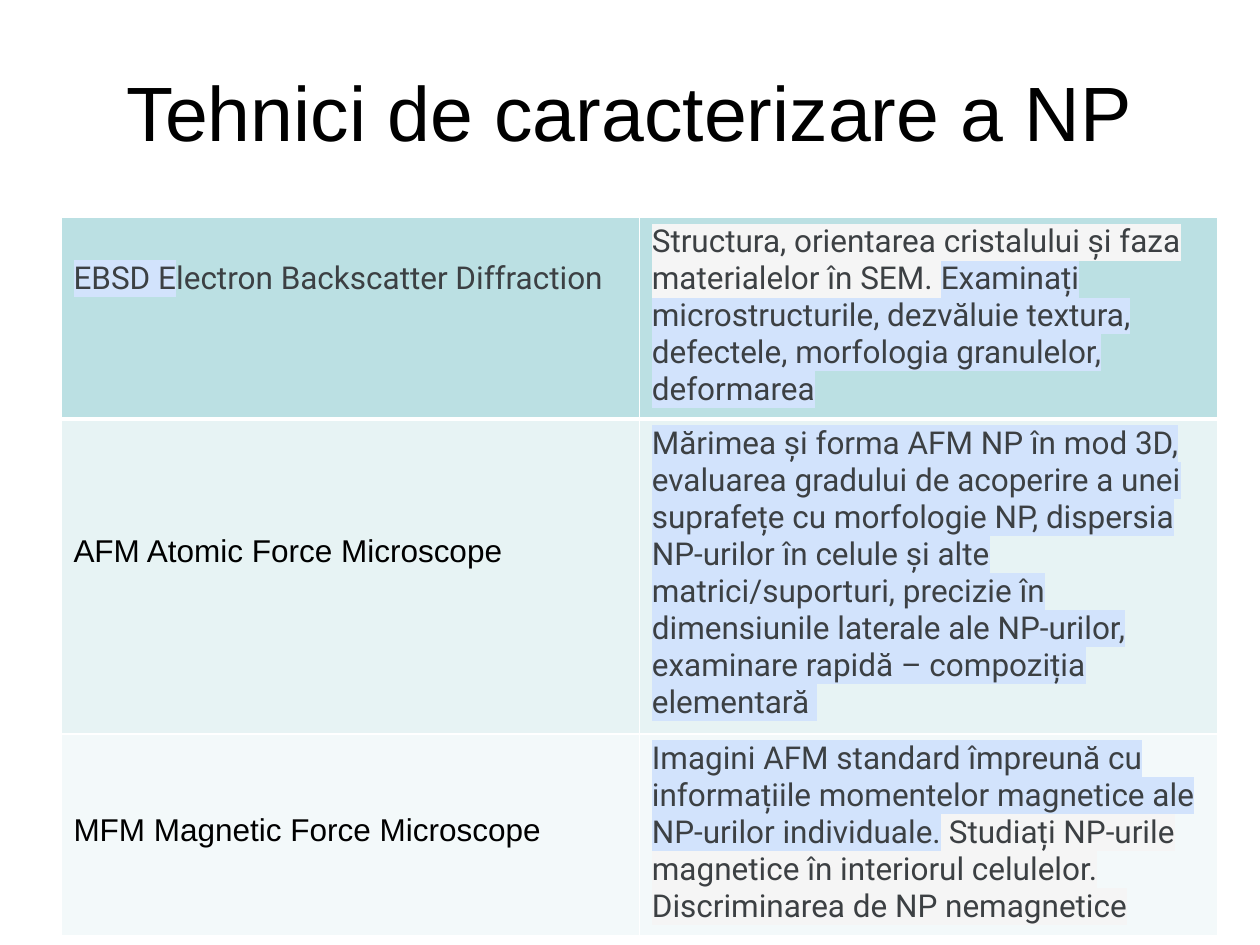
"""Builds a slide with a table of nanoparticle characterisation techniques."""
from dataclasses import dataclass

from lxml import etree
from pptx import Presentation
from pptx.dml.color import RGBColor
from pptx.enum.text import MSO_ANCHOR, PP_ALIGN
from pptx.oxml.ns import qn
from pptx.util import Pt

MIDDLE = MSO_ANCHOR.MIDDLE
TOP = MSO_ANCHOR.TOP
CENTER = PP_ALIGN.CENTER
LEFT = PP_ALIGN.LEFT


@dataclass(frozen=True)
class Theme:
    title_font: str = "Arial"
    detail_font: str = "Roboto"
    title_size: float = 44
    body_size: float = 18
    black: str = "000000"
    gray: str = "3C4043"
    blue_mark: str = "D2E3FC"
    gray_mark: str = "F5F5F5"
    border: str = "FFFFFF"
    row_fills: tuple = ("BBE0E3", "E7F3F4", "F3F9FA")
    thin: float = 1
    thick: float = 3
    cell_margin: float = 3.6
    line_height: float = 20.7


def add_color(parent, color):
    etree.SubElement(parent, qn("a:srgbClr"), val=color)


def add_run(paragraph, text, *, font, size, color, mark=None):
    run = paragraph.add_run()
    run.text = text
    run.font.size = Pt(size)
    run.font.color.rgb = RGBColor.from_string(color)
    run.font.name = font
    if mark:
        highlight = etree.Element(qn("a:highlight"))
        add_color(highlight, mark)
        run.font.fill  # noqa: B018
        run._r.rPr.find(qn("a:solidFill")).addnext(highlight)


class SlideBuilder:
    def __init__(self, slide, theme):
        self.slide = slide
        self.theme = theme

    def title(self, text, left, top, width, height):
        frame = self.slide.shapes.add_textbox(
            Pt(left), Pt(top), Pt(width), Pt(height)).text_frame
        frame.word_wrap = True
        frame.vertical_anchor = MIDDLE
        heading = frame.paragraphs[0]
        heading.alignment = CENTER
        add_run(heading, text, font=self.theme.title_font,
                size=self.theme.title_size, color=self.theme.black)

    def borders(self, cell, top, bottom):
        properties = cell._tc.get_or_add_tcPr()
        widths = {"L": self.theme.thin, "R": self.theme.thin, "T": top, "B": bottom}
        for position, (side, width) in enumerate(widths.items()):
            line = etree.Element(qn(f"a:ln{side}"), w=str(Pt(width)))
            add_color(etree.SubElement(line, qn("a:solidFill")), self.theme.border)
            properties.insert(position, line)

    def cell(self, cell, runs, fill, lines_above=0):
        cell.fill.solid()
        cell.fill.fore_color.rgb = RGBColor.from_string(fill)
        cell.vertical_anchor = TOP
        cell.margin_top = Pt(self.theme.cell_margin + lines_above * self.theme.line_height)
        paragraph = cell.text_frame.paragraphs[0]
        paragraph.alignment = LEFT
        for text, font, color, mark in runs:
            add_run(paragraph, text, font=font, size=self.theme.body_size,
                    color=color, mark=mark)

    def table(self, techniques, left, top, width, row_heights):
        table = self.slide.shapes.add_table(
            len(techniques), 2, Pt(left), Pt(top), Pt(width), Pt(sum(row_heights))).table
        table.first_row = False
        table.horz_banding = False
        thin, thick = self.theme.thin, self.theme.thick
        for index, (lines_above, name, details) in enumerate(techniques):
            table.rows[index].height = Pt(row_heights[index])
            fill = self.theme.row_fills[index]
            name_cell, detail_cell = table.cell(index, 0), table.cell(index, 1)
            self.cell(name_cell, name, fill, lines_above)
            self.cell(detail_cell, details, fill)
            for cell in (name_cell, detail_cell):
                self.borders(cell, thick if index == 1 else thin,
                             thick if index == 0 else thin)


def main():
    theme = Theme()
    plain = (theme.title_font, theme.black, None)
    unmarked = (theme.detail_font, theme.gray, None)
    blue = (theme.detail_font, theme.gray, theme.blue_mark)
    gray = (theme.detail_font, theme.gray, theme.gray_mark)
    techniques = [
        (1,
         [("EBSD E", *blue), ("lectron Backscatter Diffraction", *unmarked)],
         [("Structura, orientarea cristalului și faza materialelor în SEM. ", *gray),
          ("Examinați microstructurile, dezvăluie textura, defectele, "
           "morfologia granulelor, deformarea", *blue)]),
        (3,
         [("AFM Atomic Force Microscope", *plain)],
         [("Mărimea și forma AFM NP în mod 3D, evaluarea gradului de acoperire a unei "
           "suprafețe cu morfologie NP, dispersia NP-urilor în celule și alte "
           "matrici/suporturi, precizie în dimensiunile laterale ale NP-urilor, "
           "examinare rapidă – compoziția elementară ", *blue)]),
        (2,
         [("MFM Magnetic Force Microscope", *plain)],
         [("Imagini AFM standard împreună cu informațiile momentelor magnetice ale "
           "NP-urilor individuale.", *blue),
          (" Studiați NP-urile magnetice în interiorul celulelor. "
           "Discriminarea de NP nemagnetice", *gray)]),
    ]

    presentation = Presentation()
    presentation.slide_width, presentation.slide_height = Pt(720), Pt(540)
    slide = presentation.slides.add_slide(presentation.slide_layouts[6])
    builder = SlideBuilder(slide, theme)
    builder.title("Tehnici de caracterizare a NP", 36, 18, 648, 90)
    builder.table(techniques, 34.8, 124.2, 661, (112, 176, 112))
    presentation.save("out.pptx")


if __name__ == "__main__":
    main()
